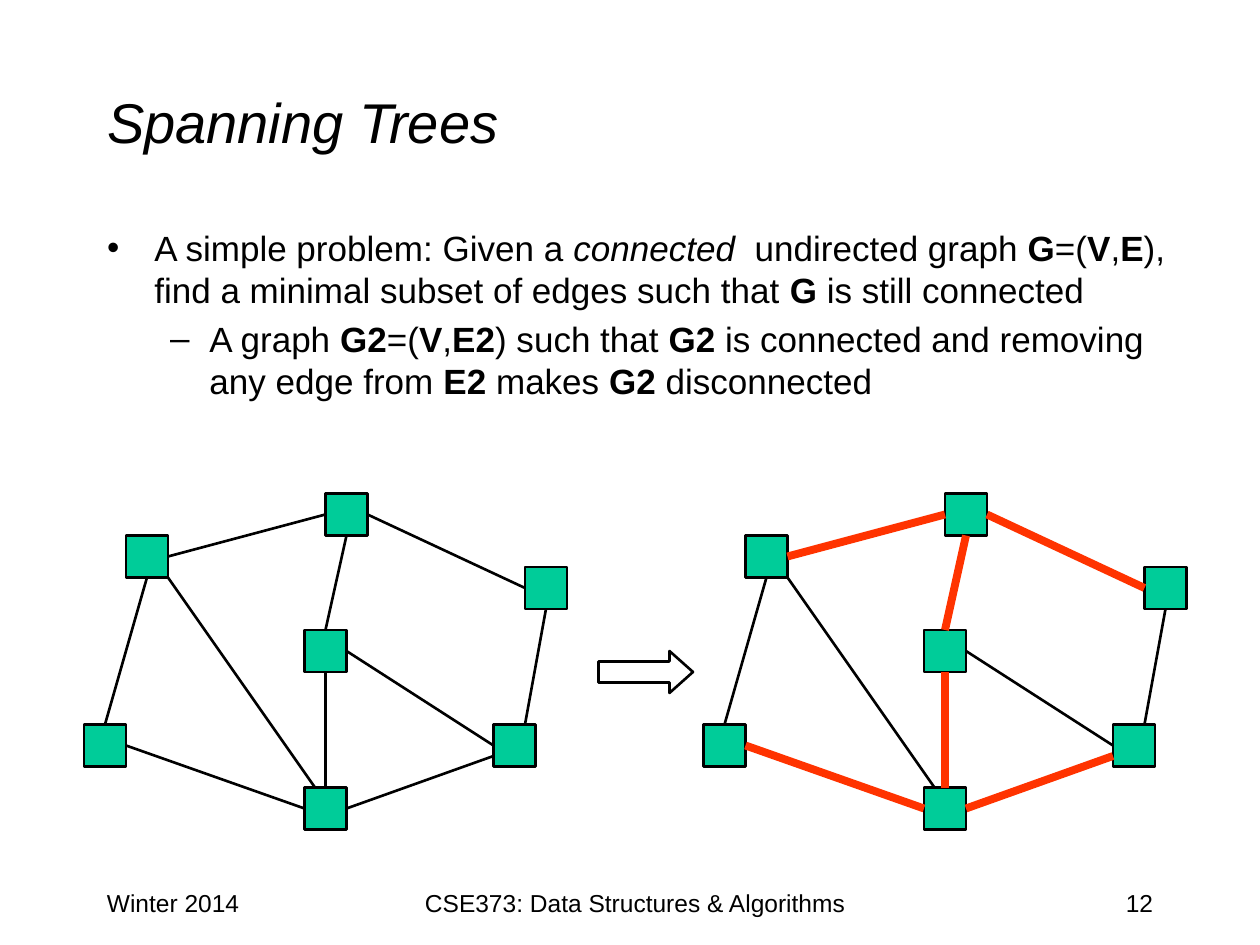
from lxml.etree import SubElement
from pptx import Presentation
from pptx.dml.color import RGBColor
from pptx.enum.shapes import MSO_CONNECTOR as CONN, MSO_SHAPE as SHAPE
from pptx.enum.text import MSO_ANCHOR as ANCHOR, PP_ALIGN as ALIGN
from pptx.oxml.ns import qn
from pptx.util import Pt

COLORS = {"text": "000000", "node": "00CC99", "edge": "000000",
          "tree": "FF3300", "arrow": "FFFFFF"}
FONT = "Arial"
NODE = 24
MID = NODE / 2
TOP, LEFT, BOTTOM, RIGHT = (MID, 0), (0, MID), (MID, NODE), (NODE, MID)
SITES = [TOP, LEFT, BOTTOM, RIGHT]

NODES = {"a": (24, 24), "b": (0, 132), "c": (126, 168), "d": (234, 132),
         "e": (126, 78), "f": (138, 0), "g": (252, 42)}
EDGES = [("a", RIGHT, "f", LEFT), ("f", BOTTOM, "e", TOP),
         ("f", RIGHT, "g", LEFT), ("e", RIGHT, "d", LEFT),
         ("g", BOTTOM, "d", (18, 0)), ("e", BOTTOM, "c", TOP),
         ("c", RIGHT, "d", (0, 18)), ("b", RIGHT, "c", LEFT),
         ("a", BOTTOM, "b", TOP), ("a", (NODE, NODE), "c", (6, 0))]
TREE = {"af", "fe", "fg", "ec", "cd", "bc"}

BULLETS = [
    (0, 27, -27, "A simple problem: Given a |_connected|  undirected graph |*G|=(|*V|,|*E|), "
                 "find a minimal subset of edges such that |*G| is still connected"),
    (1, 58.5, -22.5, "A graph |*G2|=(|*V|,|*E2|) such that |*G2| is connected and removing "
                     "any edge from |*E2| makes |*G2| disconnected"),
]


def rgb(name):
    return RGBColor.from_string(COLORS[name])


def place(sp, box):
    sp.left, sp.top, sp.width, sp.height = (Pt(v) for v in box)


def style_run(r, size, bold=False, italic=False):
    r.font.name, r.font.size = FONT, Pt(size)
    r.font.bold, r.font.italic = bold, italic
    r.font.color.rgb = rgb("text")


def add_title(s, box, text):
    sp = s.shapes.title
    place(sp, box)
    tf = sp.text_frame
    tf.text = text
    tf.vertical_anchor = ANCHOR.MIDDLE
    p = tf.paragraphs[0]
    p.alignment = ALIGN.LEFT
    style_run(p.runs[0], 32, italic=True)


def add_body(s, box, bullets):
    sp = s.placeholders[1]
    place(sp, box)
    tf = sp.text_frame
    for i, (level, margin, indent, text) in enumerate(bullets):
        p = tf.add_paragraph() if i else tf.paragraphs[0]
        p.level = level
        pPr = p._p.get_or_add_pPr()
        pPr.set("marL", str(Pt(margin)))
        pPr.set("indent", str(Pt(indent)))
        for part in text.split("|"):
            r = p.add_run()
            r.text = part.lstrip("*_")
            style_run(r, 20, bold=part.startswith("*"), italic=part.startswith("_"))


def add_footer(s, box):
    x, y, w, h = box
    for dx, width, text, align in [
            (0, 150, "Winter 2014", ALIGN.LEFT),
            (174, 270, "CSE373: Data Structures & Algorithms", ALIGN.CENTER),
            (w - 150, 150, "12", ALIGN.RIGHT)]:
        tf = s.shapes.add_textbox(Pt(x + dx), Pt(y), Pt(width), Pt(h)).text_frame
        tf.word_wrap = True
        tf.text = text
        p = tf.paragraphs[0]
        p.alignment = align
        style_run(p.runs[0], 14)


def add_block(s, kind, box, fill):
    sp = s.shapes.add_shape(kind, *(Pt(v) for v in box))
    sp.shadow.inherit = False
    sp.fill.solid()
    sp.fill.fore_color.rgb = rgb(fill)
    sp.line.color.rgb = rgb("edge")
    sp.line.width = Pt(1.5)
    return sp


def add_graph(s, x, y, tree=()):
    nodes = {name: add_block(s, SHAPE.RECTANGLE, (x + dx, y + dy, NODE, NODE), "node")
             for name, (dx, dy) in NODES.items()}
    for start, out, end, into in EDGES:
        (x1, y1), (x2, y2) = NODES[start], NODES[end]
        line = s.shapes.add_connector(
            CONN.STRAIGHT, Pt(x + x1 + out[0]), Pt(y + y1 + out[1]),
            Pt(x + x2 + into[0]), Pt(y + y2 + into[1]))
        if out in SITES:
            line.begin_connect(nodes[start], SITES.index(out))
        if into in SITES:
            line.end_connect(nodes[end], SITES.index(into))
        in_tree = start + end in tree
        line.line.color.rgb = rgb("tree" if in_tree else "edge")
        line.line.width = Pt(4.5 if in_tree else 1.5)
        SubElement(line._element.spPr, qn("a:effectLst"))


def add_arrow(s, box):
    sp = add_block(s, SHAPE.RIGHT_ARROW, box, "arrow")
    sp.adjustments[0], sp.adjustments[1] = 0.5, 0.56


def main():
    prs = Presentation()
    prs.slide_width, prs.slide_height = Pt(720), Pt(540)
    s = prs.slides.add_slide(prs.slide_layouts[1])
    add_title(s, (54, 24, 612, 90), "Spanning Trees")
    add_body(s, (54, 126, 624, 144), BULLETS)
    add_footer(s, (54, 504, 612, 36))
    add_graph(s, 48, 282)
    add_graph(s, 402, 282, TREE)
    add_arrow(s, (342, 372, 54, 24))
    prs.save("out.pptx")


if __name__ == "__main__":
    main()
